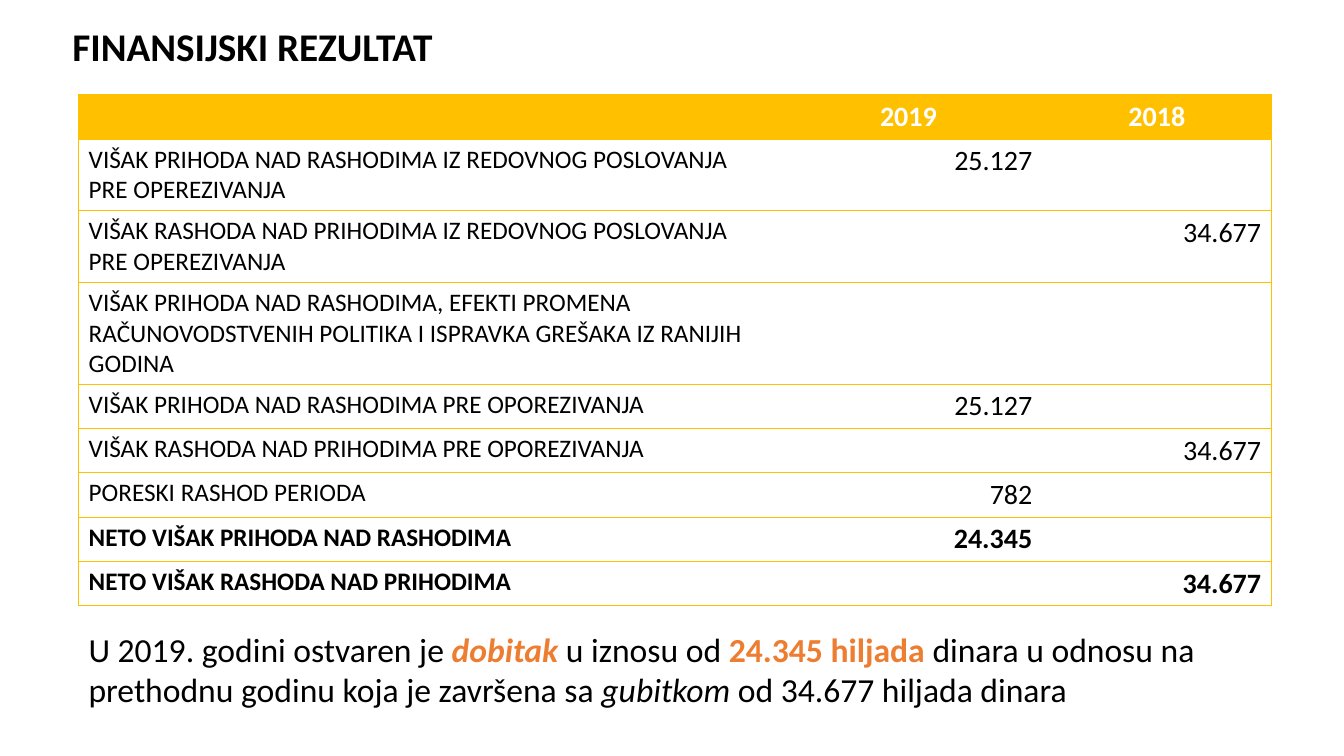
import pptx
import pptx.dml.color
import pptx.enum.text
import pptx.oxml
import pptx.oxml.ns
import pptx.util
from pptx.util import Inches

FONT = "Calibri"
BLACK, WHITE, GOLD, ORANGE = "000000", "FFFFFF", "FFC000", "ED7D31"
PLAIN_TABLE_STYLE = "{2D5ABB26-0587-4C30-8999-92F81FD0307C}"
ALIGN = pptx.enum.text.PP_ALIGN
ANCHOR = pptx.enum.text.MSO_ANCHOR

COLUMN_WIDTHS = [6.9, 2.66, 2.27]
LINE_ROW_HEIGHTS = {1: 0.44, 2: 0.71, 3: 1.01}

# Label, value for 2019, value for 2018, lines of text, bold
RESULTS = [
    ("VIŠAK PRIHODA NAD RASHODIMA IZ REDOVNOG POSLOVANJA PRE OPEREZIVANJA", "25.127", "", 2, False),
    ("VIŠAK RASHODA NAD PRIHODIMA IZ REDOVNOG POSLOVANJA PRE OPEREZIVANJA", "", "34.677", 2, False),
    ("VIŠAK PRIHODA NAD RASHODIMA, EFEKTI PROMENA RAČUNOVODSTVENIH POLITIKA "
     "I ISPRAVKA GREŠAKA IZ RANIJIH GODINA", "", "", 3, False),
    ("VIŠAK PRIHODA NAD RASHODIMA PRE OPOREZIVANJA", "25.127", "", 1, False),
    ("VIŠAK RASHODA NAD PRIHODIMA PRE OPOREZIVANJA", "", "34.677", 1, False),
    ("PORESKI RASHOD PERIODA", "782", "", 1, False),
    ("NETO VIŠAK PRIHODA NAD RASHODIMA", "24.345", "", 1, True),
    ("NETO VIŠAK RASHODA NAD PRIHODIMA", "", "34.677", 1, True),
]

# Text and the format that differs from plain text
SUMMARY = [
    ("U 2019. godini ostvaren je ", {}),
    ("dobitak ", {"color": ORANGE, "bold": True, "italic": True}),
    ("u iznosu od ", {}),
    ("24.345 hiljada ", {"color": ORANGE, "bold": True}),
    ("dinara u odnosu na prethodnu godinu koja je završena sa ", {}),
    ("gubitkom ", {"italic": True}),
    ("od 34.677 hiljada dinara", {}),
]


def rgb(value):
    return pptx.dml.color.RGBColor.from_string(value)


def add_text(paragraph, text, size=18, color=BLACK, bold=False, italic=False, align=ALIGN.LEFT):
    paragraph.alignment = align
    run = paragraph.add_run()
    run.text = text
    font = run.font
    font.name, font.size = FONT, pptx.util.Pt(size)
    font.bold, font.italic = bold, italic
    font.color.rgb = rgb(color)


def add_text_box(slide, left, top, width, height, anchor=ANCHOR.TOP):
    """Add a wrapping text box and return its first paragraph."""
    box = slide.shapes.add_textbox(Inches(left), Inches(top), Inches(width), Inches(height))
    box.text_frame.word_wrap = True
    box.text_frame.vertical_anchor = anchor
    return box.text_frame.paragraphs[0]


def set_borders(cell, sides):
    """Draw thin gold lines on the given sides, in the order L, R, T, B."""
    properties = cell._tc.get_or_add_tcPr()
    for side in sides:
        properties.append(pptx.oxml.parse_xml(
            f'<a:ln{side} {pptx.oxml.ns.nsdecls("a")} w="{pptx.util.Pt(0.5)}">'
            f'<a:solidFill><a:srgbClr val="{GOLD}"/></a:solidFill></a:ln{side}>'))


def add_results_table(slide):
    shape = slide.shapes.add_table(len(RESULTS) + 1, len(COLUMN_WIDTHS), Inches(0.78),
                                   Inches(0.94), Inches(sum(COLUMN_WIDTHS)), Inches(5))
    table = shape.table
    table.horz_banding = False
    table._tbl.tblPr.find(pptx.oxml.ns.qn("a:tableStyleId")).text = PLAIN_TABLE_STYLE
    for column, width in zip(table.columns, COLUMN_WIDTHS):
        column.width = Inches(width)

    # Header and body share one grid
    last_column = len(COLUMN_WIDTHS) - 1
    for row_index, (*texts, lines, bold) in enumerate([("", "2019", "2018", 1, True)] + RESULTS):
        table.rows[row_index].height = Inches(LINE_ROW_HEIGHTS[lines])
        header = row_index == 0
        for column_index, text in enumerate(texts):
            cell = table.cell(row_index, column_index)
            sides = {0: "LTB", last_column: "RTB"}.get(column_index, "TB")
            set_borders(cell, sides)
            cell.fill.solid()
            cell.fill.fore_color.rgb = rgb(GOLD if header else WHITE)
            if text:
                value_align = ALIGN.CENTER if header else ALIGN.RIGHT
                add_text(cell.text_frame.paragraphs[0], text, bold=bold,
                         size=20 if column_index else 18,
                         color=WHITE if header else BLACK,
                         align=value_align if column_index else ALIGN.LEFT)


def main():
    presentation = pptx.Presentation()
    presentation.slide_width, presentation.slide_height = Inches(13.33), Inches(7.5)
    slide = presentation.slides.add_slide(presentation.slide_layouts[6])

    # Title
    title = add_text_box(slide, 0.62, 0.15, 11.54, 0.67, anchor=ANCHOR.MIDDLE)
    title.line_spacing = 0.9
    add_text(title, "FINANSIJSKI REZULTAT", size=28, bold=True)

    # Table
    add_results_table(slide)

    # Summary sentence
    summary = add_text_box(slide, 0.78, 6.19, 11.85, 0.91)
    for text, text_format in SUMMARY:
        add_text(summary, text, size=24, **text_format)

    presentation.save("out.pptx")


if __name__ == "__main__":
    main()
